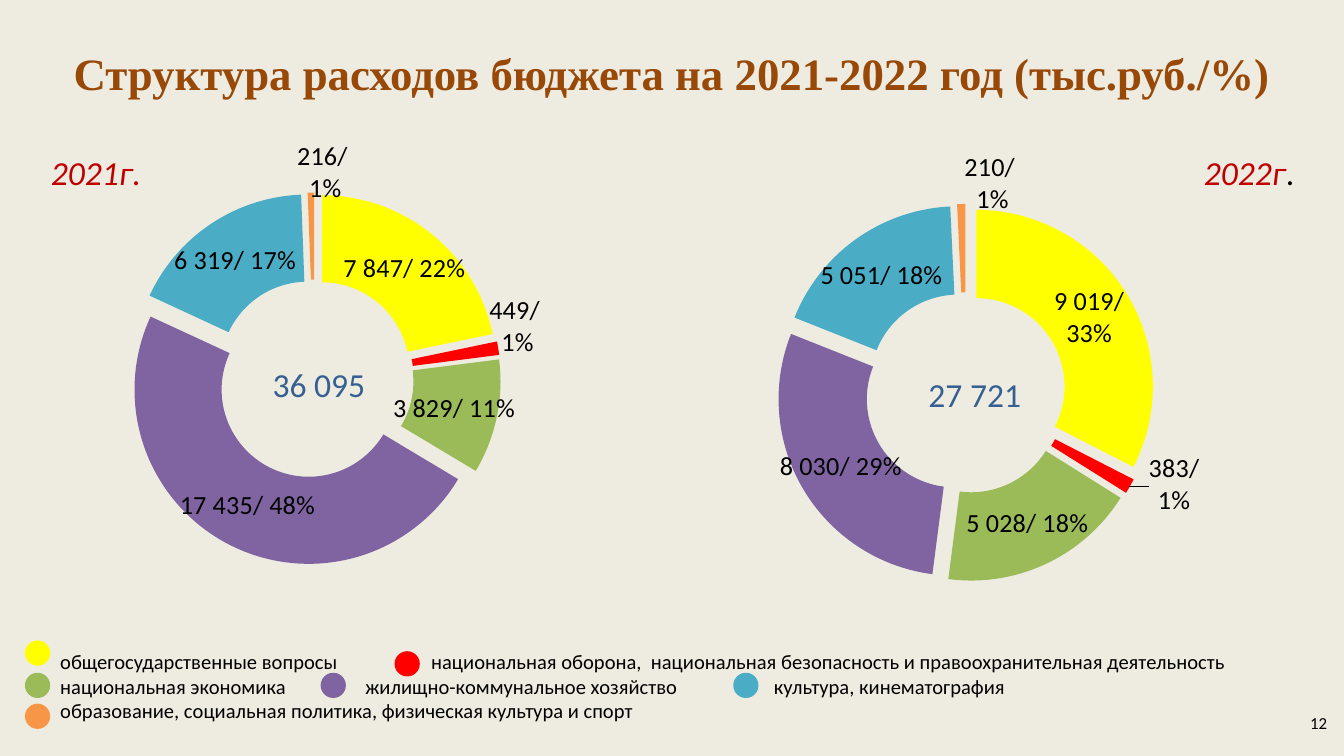
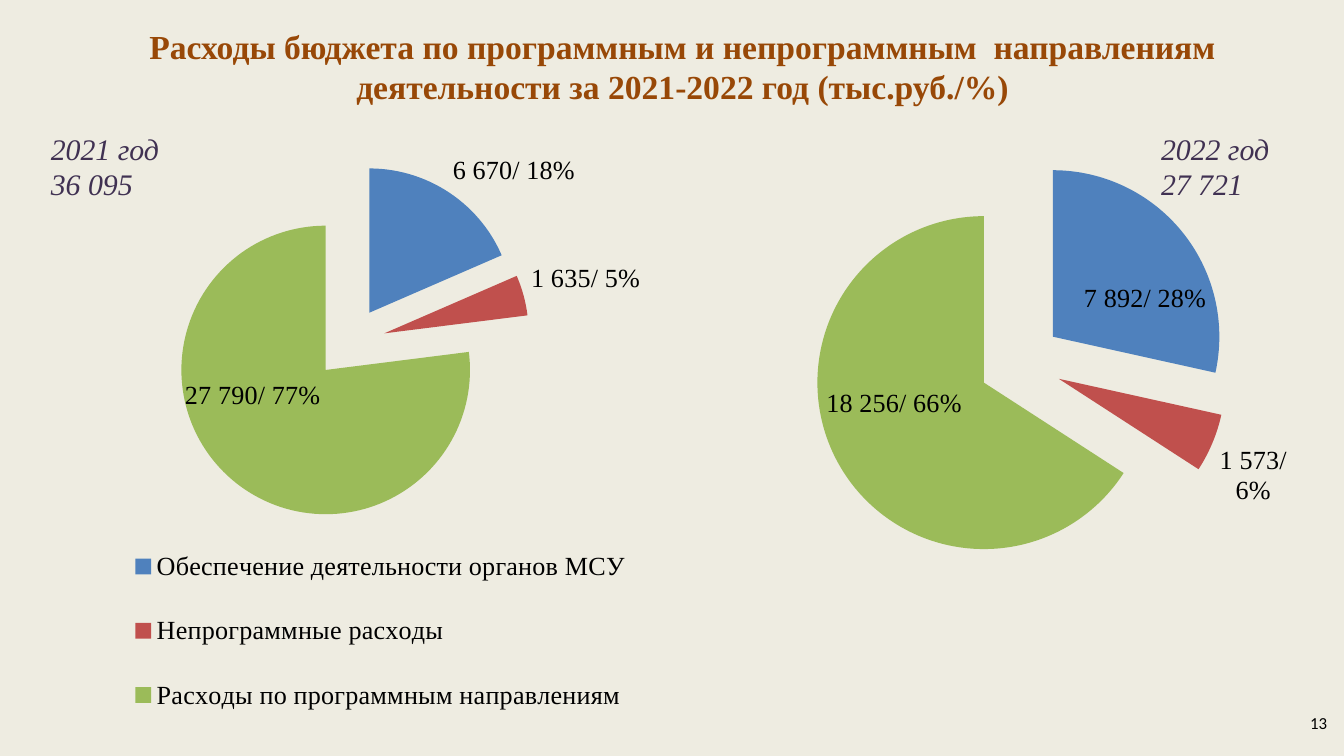
from lxml.etree import SubElement
from pptx import Presentation
from pptx.chart.data import CategoryChartData
from pptx.dml.color import RGBColor
from pptx.enum.chart import XL_CHART_TYPE, XL_LABEL_POSITION, XL_LEGEND_POSITION
from pptx.enum.shapes import MSO_SHAPE
from pptx.enum.text import MSO_ANCHOR, MSO_AUTO_SIZE, PP_ALIGN
from pptx.oxml import parse_xml
from pptx.oxml.ns import nsdecls, qn
from pptx.util import Inches, Pt

COLORS = {
    "background": "EEECE1", "title": "984807", "text": "000000",
    "total": "376092", "year": "C00000", "program_year": "403152",
    "general": "FFFF00", "defence": "FF0000", "economy": "9BBB59",
    "housing": "8064A2", "culture": "4BACC6", "social": "F79646",
    "authorities": "4F81BD", "other": "C0504D", "programs": "9BBB59",
}
SECTORS = ["general", "defence", "economy", "housing", "culture", "social"]
DIRECTIONS = ["authorities", "other", "programs"]
SERIF, SANS = "Times New Roman", "Calibri"
CELL = Inches(0.1)
DOT = 1.6


def rgb(name):
    return RGBColor.from_string(COLORS[name])


def grid(*cells):
    return [int(c * CELL) for c in cells]


def style(font, size, face=SANS, color="text", bold=False, italic=False):
    font.size, font.name = Pt(size), face
    font.bold, font.italic = bold, italic
    font.color.rgb = rgb(color)


def write(tf, text, align=PP_ALIGN.LEFT, wrap=False, **fmt):
    tf.text = text
    tf.word_wrap = wrap
    tf.vertical_anchor = MSO_ANCHOR.TOP
    tf.auto_size = MSO_AUTO_SIZE.SHAPE_TO_FIT_TEXT
    for p in tf.paragraphs:
        p.alignment = align
        for r in p.runs:
            style(r.font, **fmt)


def add_text(s, area, text, **fmt):
    tf = s.shapes.add_textbox(*grid(*area)).text_frame
    write(tf, text, **fmt)
    return tf


def add_slide(prs, title, area, size, number):
    s = prs.slides.add_slide(prs.slide_layouts[5])
    sp = s.shapes.title
    sp.left, sp.top, sp.width, sp.height = grid(*area)
    write(sp.text_frame, title, align=PP_ALIGN.CENTER, wrap=True,
          size=size, face=SERIF, color="title", bold=True)
    add_text(s, (96.5, 52.5, 3.3, 2.5), number, size=9)
    return s


def manual_layout(x, y, w=None, h=None, edge=False):
    parts = [("layoutTarget", "inner")] if w else []
    if edge or w:
        parts += [("xMode", "edge"), ("yMode", "edge")]
    parts += [("x", x), ("y", y)]
    if w:
        parts += [("w", w), ("h", h)]
    layout = parse_xml(f"<c:layout {nsdecls('c')}><c:manualLayout/></c:layout>")
    for tag, value in parts:
        SubElement(layout[0], qn(f"c:{tag}")).set("val", str(value))
    return layout


def add_pie(s, area, kind, plot_area, categories, values, colors, labels,
            shifts, explosion, face=SANS):
    data = CategoryChartData(number_format="#,##0")
    data.categories = categories
    data.add_series("Series 1", values)
    chart = s.shapes.add_chart(kind, *grid(*area), data).chart
    chart.has_title = chart.has_legend = False
    style(chart.font, 18)

    plot = chart.plots[0]
    plot.vary_by_categories = True
    series = plot.series[0]
    dl = series.data_labels
    dl.show_value = dl.show_percentage = True
    dl.number_format, dl.number_format_is_linked = "#,##0", False
    style(dl.font, 14, face)
    for i, (color, label) in enumerate(zip(colors, labels)):
        point = series.points[i]
        point.format.fill.solid()
        point.format.fill.fore_color.rgb = rgb(color)
        tf = point.data_label.text_frame
        tf.text = label
        for p in tf.paragraphs:
            for r in p.runs:
                style(r.font, 14, face)
        if kind == XL_CHART_TYPE.PIE:
            point.data_label.position = (
                XL_LABEL_POSITION.CENTER if i in shifts else XL_LABEL_POSITION.OUTSIDE_END)

    ser = series._element
    burst = parse_xml(f'<c:explosion {nsdecls("c")} val="{explosion}"/>')
    ser.find(qn("c:dPt")).addprevious(burst)
    for i, dlbl in enumerate(ser.iter(qn("c:dLbl"))):
        if i in shifts:
            dlbl.find(qn("c:idx")).addnext(manual_layout(*shifts[i]))
    frame = chart._chartSpace.chart.plotArea
    for old in frame.findall(qn("c:layout")):
        frame.remove(old)
    frame.insert(0, manual_layout(*plot_area))
    return chart


def add_legend(chart, x, y):
    chart.has_legend = True
    legend = chart.legend
    legend.position = XL_LEGEND_POSITION.BOTTOM
    legend.include_in_layout = False
    style(legend.font, 14, SERIF)
    element = legend._element
    for old in element.findall(qn("c:layout")):
        element.remove(old)
    element.find(qn("c:legendPos")).addnext(manual_layout(x, y, edge=True))


def add_dot(s, x, y, color):
    sp = s.shapes.add_shape(MSO_SHAPE.OVAL, *grid(x, y, DOT, DOT))
    sp.shadow.inherit = False
    sp.fill.solid()
    sp.fill.fore_color.rgb = rgb(color)
    sp.line.color.rgb = rgb(color)
    sp.line.width = Pt(2)


def add_key(s):
    rows = [
        ["общегосударственные вопросы",
         "национальная оборона,  национальная безопасность и правоохранительная деятельность"],
        ["национальная экономика", "жилищно-коммунальное хозяйство",
         "культура, кинематография"],
        ["образование, социальная политика, физическая культура и спорт"],
    ]
    tabs = [[27.6], [22.7, 53.1], []]
    tf = add_text(s, (3.5, 47.8, 93.7, 6.6), "\n".join("\t".join(r) for r in rows),
                  wrap=True, size=11)
    for p, stops in zip(tf.paragraphs, tabs):
        if stops:
            tab_list = SubElement(p._p.get_or_add_pPr(), qn("a:tabLst"))
            for stop in stops:
                tab = SubElement(tab_list, qn("a:tab"))
                tab.set("pos", str(int(stop * CELL)))
                tab.set("algn", "l")
    dots = [(2, 47.8), (29.5, 48.6), (2, 50.2), (24, 50.2), (54.7, 50.2), (2, 52.5)]
    for (x, y), color in zip(dots, SECTORS):
        add_dot(s, x, y, color)


def structure_slide(prs):
    s = add_slide(prs, "Структура расходов бюджета на 2021-2022 год (тыс.руб./%)",
                  (4.3, 2.9, 91.3, 5), 24, "12")
    numbers = [str(i + 1) for i in range(len(SECTORS))]
    add_pie(s, (3.5, 10, 40.2, 36.4), XL_CHART_TYPE.DOUGHNUT, (0.15, 0.11, 0.69, 0.78),
            numbers, [7847, 449, 3829, 17435, 6319, 216], SECTORS,
            ["7 847/ 22%", "449/\n 1%", "3 829/ 11%", "17 435/ 48%", "6 319/ 17%", "216/\n 1%"],
            {1: (0.11, -0.06), 5: (0.02, -0.13)}, 14)
    add_pie(s, (50.8, 10, 40.9, 37), XL_CHART_TYPE.DOUGHNUT, (0.17, 0.14, 0.69, 0.76),
            numbers, [9019, 383, 5028, 8030, 5051, 210], SECTORS,
            ["9 019/\n33%", "383/\n1%", "5 028/ 18%", "8 030/ 29%", "5 051/ 18%", "210/\n 1%"],
            {1: (0.15, 0.04), 5: (0.05, -0.13)}, 14)
    add_key(s)
    add_text(s, (19.3, 26.6, 9, 4), "36 095", size=18, color="total")
    add_text(s, (68.1, 27.3, 9, 4), "27 721", size=18, color="total")
    add_text(s, (2.8, 10.8, 8.8, 4), "2021г.", size=18, color="year", italic=True)
    tf = add_text(s, (88.6, 10.8, 8.8, 4), "2022г", size=18, color="year", italic=True)
    r = tf.paragraphs[0].add_run()
    r.text = "."
    style(r.font, 18)


def programs_slide(prs):
    s = add_slide(prs, "Расходы бюджета по программным и непрограммным  направлениям "
                  "деятельности за 2021-2022 год (тыс.руб./%)",
                  (5.9, 1.4, 89.8, 7.1), 18, "13")
    chart = add_pie(s, (4.3, 10.8, 46.7, 43.3), XL_CHART_TYPE.PIE, (0.03, 0.03, 0.87, 0.62),
                    ["Обеспечение деятельности органов МСУ\n", "Непрограммные расходы\n",
                     "Расходы по программным направлениям"],
                    [6670, 1635, 27790], DIRECTIONS,
                    ["6 670/ 18%", "1 635/ 5%", "27 790/ 77%"],
                    {2: (-0.04, -0.05)}, 25, SERIF)
    add_legend(chart, 0.11, 0.69)
    add_pie(s, (56.3, 10.8, 40.9, 35.6), XL_CHART_TYPE.PIE, (0.04, 0.02, 0.88, 0.87),
            ["1", "2", "3"], [7892, 1573, 18256], DIRECTIONS,
            ["7 892/ 28%", "1 573/ 6%", "18 256/ 66%"],
            {0: (0.05, 0.03), 2: (-0.03, -0.04)}, 25, SERIF)
    for x, text in ((85.4, "2022 год\n27 721"), (2.8, "2021 год\n36 095")):
        add_text(s, (x, 9.2, 10.2, 6.4), text, size=16, face=SERIF,
                 color="program_year", italic=True)


def main():
    prs = Presentation()
    prs.slide_width, prs.slide_height = Inches(10), Inches(10) * 9 // 16
    fill = prs.slide_master.background.fill
    fill.solid()
    fill.fore_color.rgb = rgb("background")
    structure_slide(prs)
    programs_slide(prs)
    prs.save("out.pptx")


if __name__ == "__main__":
    main()
